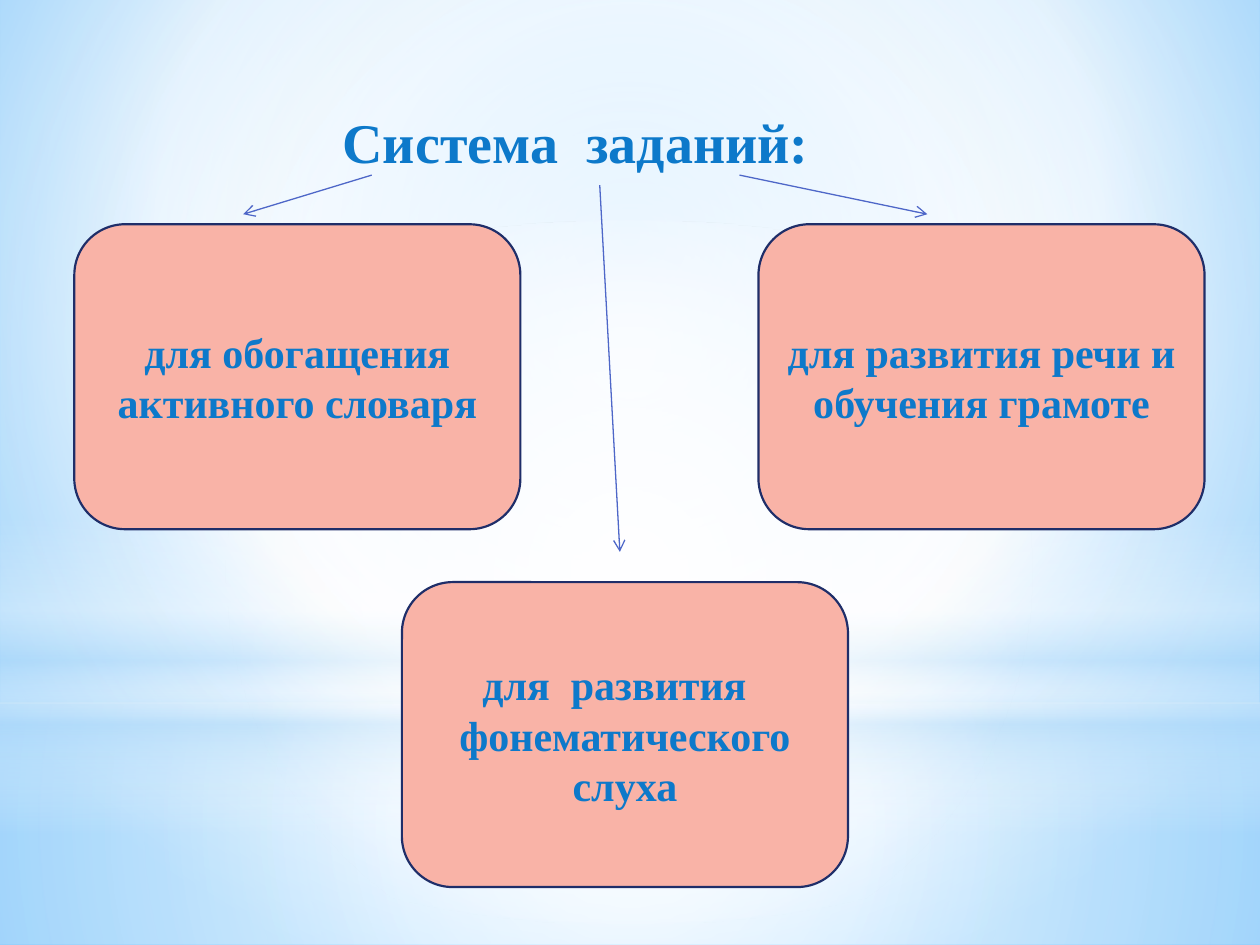
import pptx
import pptx.util
import pptx.dml.color
import pptx.enum.shapes
import pptx.enum.text
import pptx.oxml
import pptx.oxml.ns
from lxml import etree

Inches, Pt = pptx.util.Inches, pptx.util.Pt
RGBColor = pptx.dml.color.RGBColor
Shape = pptx.enum.shapes.MSO_SHAPE
Anchor = pptx.enum.text.MSO_ANCHOR
qn = pptx.oxml.ns.qn

WIDTH, HEIGHT = 10, 7.5
BLUE = RGBColor(0x0D, 0x79, 0xCA)
PINK = RGBColor(0xF9, 0xB3, 0xA7)
NAVY = RGBColor(0x1F, 0x2E, 0x69)
INDIGO = RGBColor(0x4E, 0x67, 0xC8)
WHITE = RGBColor(0xFF, 0xFF, 0xFF)
PALE = RGBColor(0xB4, 0xDC, 0xFA)
SKY = RGBColor(0x9E, 0xD5, 0xFF)
DEEP_SKY = RGBColor(0x5B, 0xB9, 0xFF)
FONT = "Times New Roman"

TITLE = "Система  заданий:"
BOX_SIZE = (3.54, 2.42)
UPPER_ROW, LOWER_ROW = 1.78, 4.62
BOXES = [
    ("для обогащения активного словаря", 0.59, UPPER_ROW),
    ("для  развития   фонематического слуха", 3.19, LOWER_ROW),
    ("для развития речи и обучения грамоте", 6.02, UPPER_ROW),
]
ARROWS = [
    (4.76, 1.47, 4.92, 4.38),
    (5.87, 1.39, 7.36, 1.7),
    (2.95, 1.39, 1.93, 1.7),
]

CENTER = (50, 50, 50, 50)
BACKGROUND_STOPS = [(0, SKY, 100), (60, WHITE, 100), (100, DEEP_SKY, 100)]
BACKGROUND_FOCUS = (20, 10, 20, 60)
HORIZON = 5.58
GLOWS = [
    (Shape.RECTANGLE, HORIZON, HEIGHT - HORIZON, CENTER,
     [(0, WHITE, 91), (37, WHITE, 76), (100, PALE, 79)]),
    (Shape.RECTANGLE, 0, HORIZON, CENTER,
     [(0, WHITE, 89), (48, WHITE, 62), (100, PALE, 79)]),
    (Shape.RECTANGLE, 4.12, 2.5, None,
     [(0, WHITE, 0), (29, WHITE, 30), (45, PALE, 40),
      (55, WHITE, 26), (65, PALE, 60), (100, WHITE, 0)]),
    (Shape.OVAL, 1.75, HORIZON, CENTER, [(0, WHITE, 100), (56, WHITE, 0)]),
]


def set_gradient(owner, fill, stops, focus):
    fill.solid()
    gradient = pptx.oxml.parse_xml(
        f'<a:gradFill {pptx.oxml.ns.nsdecls("a")} rotWithShape="1"/>')
    stop_list = etree.SubElement(gradient, qn("a:gsLst"))
    for position, color, opacity in stops:
        stop = etree.SubElement(stop_list, qn("a:gs"), pos=str(position * 1000))
        color_element = etree.SubElement(stop, qn("a:srgbClr"), val=str(color))
        if opacity < 100:
            etree.SubElement(color_element, qn("a:alpha"), val=str(opacity * 1000))
    if focus:
        circle = etree.SubElement(gradient, qn("a:path"), path="circle")
        sides = {side: str(share * 1000) for side, share in zip("ltrb", focus)}
        etree.SubElement(circle, qn("a:fillToRect"), **sides)
    else:
        etree.SubElement(gradient, qn("a:lin"), ang="5400000", scaled="0")
    solid = owner.element.find(".//" + qn("a:solidFill"))
    solid.getparent().replace(solid, gradient)


def write_text(shape, text, size, anchor):
    frame = shape.text_frame
    frame.text = text
    frame.word_wrap = True
    frame.auto_size = pptx.enum.text.MSO_AUTO_SIZE.NONE
    frame.vertical_anchor = anchor
    paragraph = frame.paragraphs[0]
    paragraph.alignment = pptx.enum.text.PP_ALIGN.CENTER
    font = paragraph.runs[0].font
    font.name, font.size, font.bold = FONT, Pt(size), True
    font.color.rgb = BLUE
    return paragraph


def add_glow(slide, kind, top, height, focus, stops):
    shape = slide.shapes.add_shape(
        kind, 0, Inches(top), Inches(WIDTH), Inches(height))
    shape.shadow.inherit = False
    set_gradient(shape, shape.fill, stops, focus)
    shape.line.fill.background()
    return shape


def add_box(slide, text, left, top):
    box = slide.shapes.add_shape(
        Shape.ROUNDED_RECTANGLE, *map(Inches, (left, top, *BOX_SIZE)))
    box.shadow.inherit = False
    box.fill.solid()
    box.fill.fore_color.rgb = PINK
    box.line.color.rgb = NAVY
    box.line.width = Pt(1.25)
    write_text(box, text, 24, Anchor.MIDDLE)


def add_arrow(slide, ends):
    arrow = slide.shapes.add_connector(
        pptx.enum.shapes.MSO_CONNECTOR.STRAIGHT, *map(Inches, ends))
    arrow.line.color.rgb = INDIGO
    arrow.line.width = Pt(0.75)
    properties = arrow.element.spPr
    etree.SubElement(properties.find(qn("a:ln")), qn("a:tailEnd"), type="arrow")
    etree.SubElement(properties, qn("a:effectLst"))


def main():
    presentation = pptx.Presentation()
    presentation.slide_width = Inches(WIDTH)
    presentation.slide_height = Inches(HEIGHT)
    slide = presentation.slides.add_slide(presentation.slide_layouts[5])
    set_gradient(slide, slide.background.fill, BACKGROUND_STOPS, BACKGROUND_FOCUS)

    for glow in GLOWS:
        front_glow = add_glow(slide, *glow)

    title = slide.shapes.title
    front_glow.element.addnext(title.element)
    title.left, title.top, title.width, title.height = map(
        Inches, (0.2, 0.8, 8.74, 3.8))
    paragraph = write_text(title, TITLE, 32, Anchor.TOP)
    paragraph.space_before, paragraph.space_after = Pt(6), Pt(3)

    for box in BOXES:
        add_box(slide, *box)
    for ends in ARROWS:
        add_arrow(slide, ends)
    presentation.save("out.pptx")


if __name__ == "__main__":
    main()
